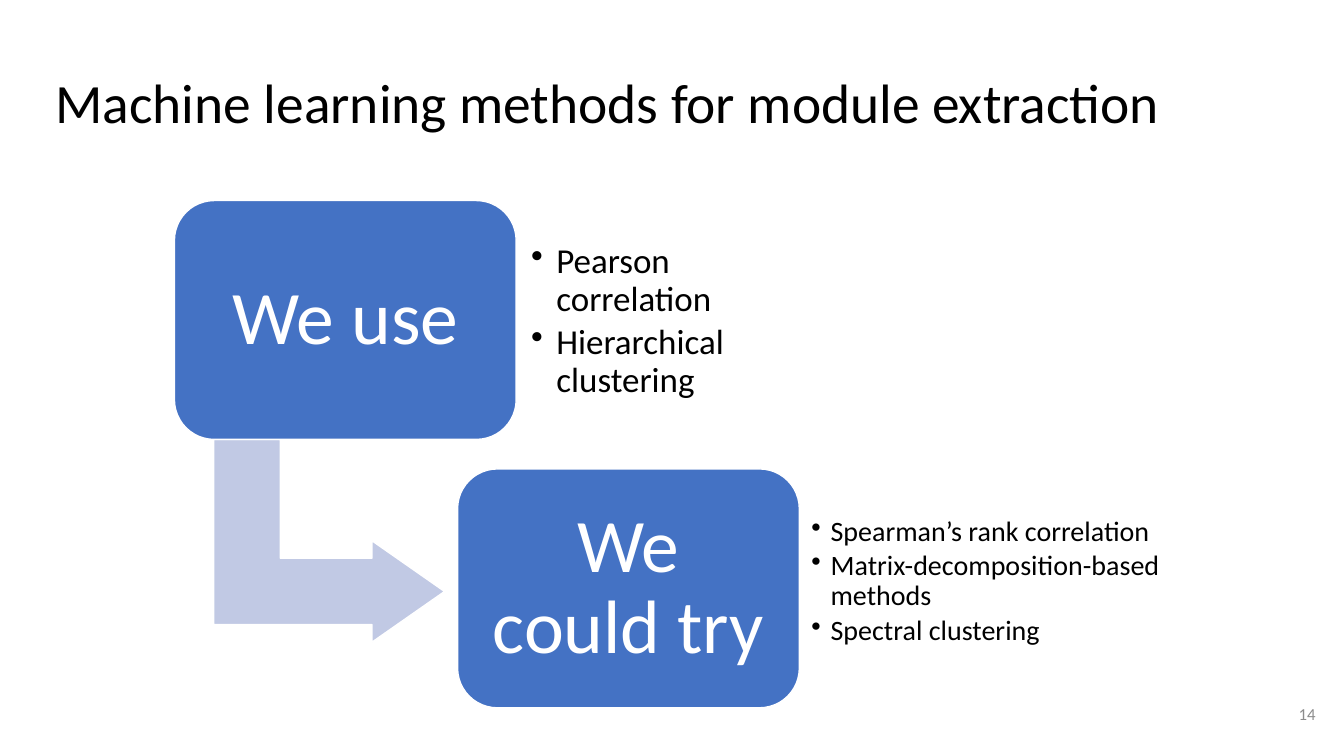
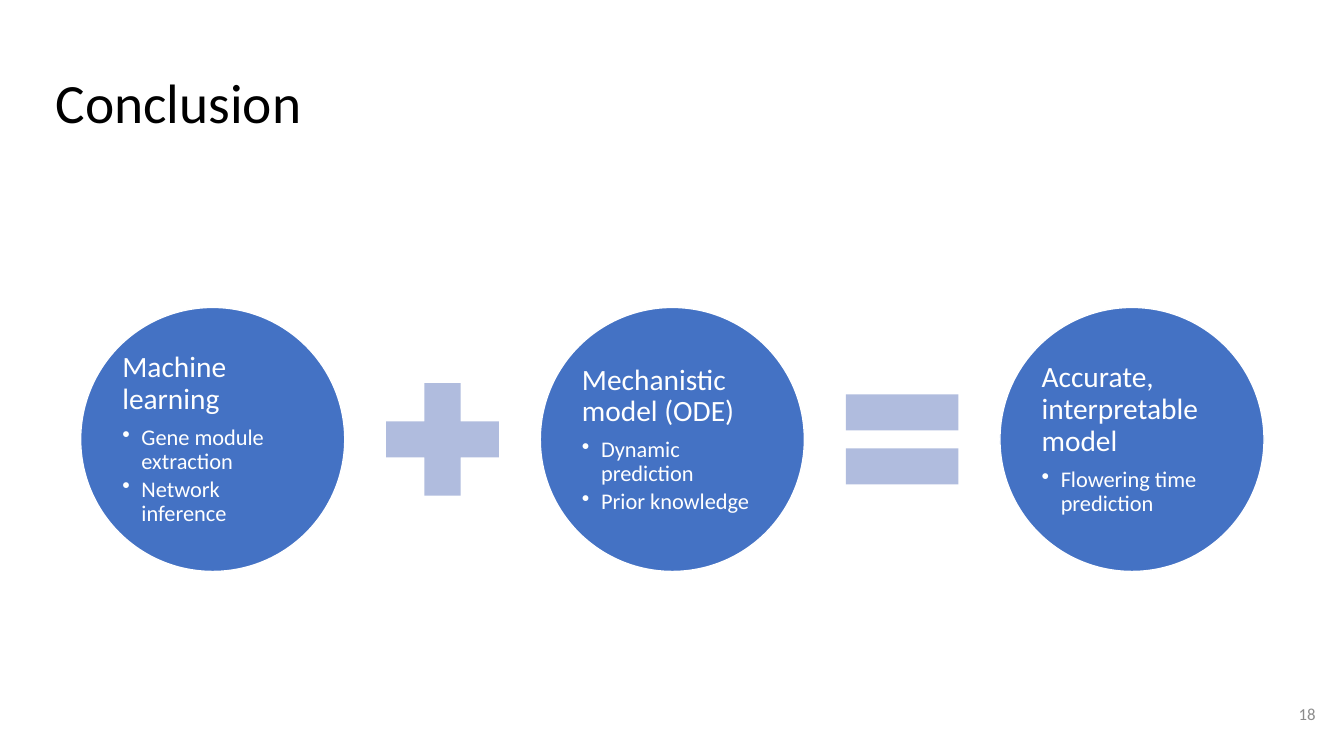
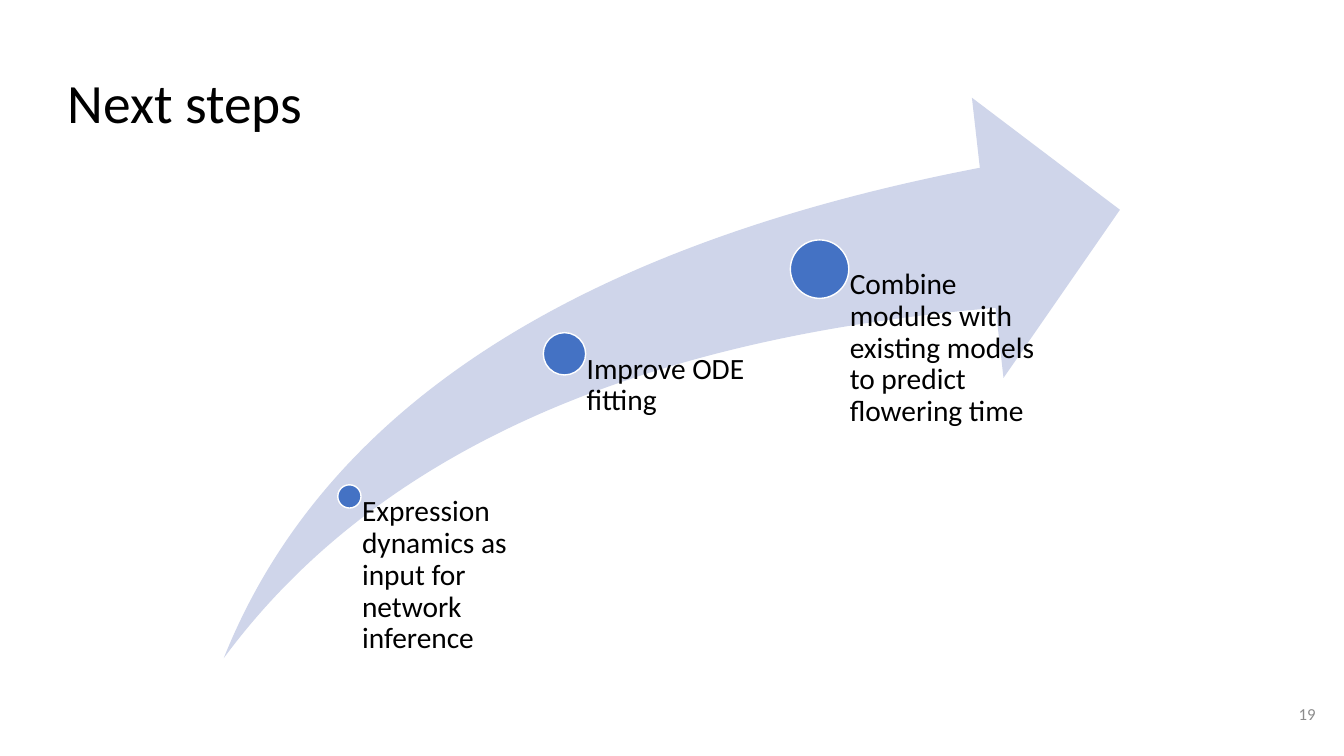
from dataclasses import dataclass
from lxml import etree
from pptx import Presentation, util as u
from pptx.dml.color import RGBColor
from pptx.enum import shapes, text
from pptx.oxml import ns


@dataclass(frozen=True)
class Theme:
    font: str = "Calibri"
    ink: str = "000000"
    white: str = "FFFFFF"
    blue: str = "4472C4"
    bend: str = "C1C9E4"
    sign: str = "B0BCDE"
    swoosh: str = "CFD5EA"
    grey: str = "8C8C8C"
    title: float = 39.6
    label: float = 54
    large: float = 25
    mid: float = 21
    list: float = 20
    small: float = 16
    note: float = 12


look = Theme()
kind = shapes.MSO_SHAPE
left, mid, right = text.PP_ALIGN.LEFT, text.PP_ALIGN.CENTER, text.PP_ALIGN.RIGHT
top, middle = text.MSO_ANCHOR.TOP, text.MSO_ANCHOR.MIDDLE

deck = Presentation()
deck.slide_width, deck.slide_height = u.Inches(13.333), u.Inches(7.5)
col, row = deck.slide_width / 100, deck.slide_height / 100


def form(page, shape, at, fill=None, edge=False):
    x, y, w, h = at
    area = [round(n) for n in (x * col, y * row, w * col, h * row)]
    if shape is None:
        return page.shapes.add_textbox(*area)
    item = page.shapes.add_shape(shape, *area)
    item.shadow.inherit = False
    item.fill.solid()
    item.fill.fore_color.rgb = RGBColor.from_string(fill)
    if edge:
        item.line.color.rgb = RGBColor.from_string(look.white)
        item.line.width = u.Pt(1)
    else:
        item.line.fill.background()
    return item


def write(item, lines, ink, pad, align=left, anchor=middle, lead=0.9, gap=0.35):
    frame = item.text_frame
    frame.word_wrap = True
    frame.auto_size = text.MSO_AUTO_SIZE.NONE
    frame.vertical_anchor = anchor
    frame.margin_left, frame.margin_top, frame.margin_right, frame.margin_bottom = map(u.Inches, pad)
    frame.text = "\n".join(line for line, size, dent in lines)
    for para, (line, size, dent) in zip(frame.paragraphs, lines):
        para.alignment = align
        para.line_spacing = lead
        para.space_before = u.Pt(0)
        para.space_after = u.Pt(size * (0.15 if dent else gap))
        if dent:
            prop = para._p.get_or_add_pPr()
            prop.set("marL", str(u.Inches(dent)))
            prop.set("indent", str(-u.Inches(dent)))
            etree.SubElement(prop, ns.qn("a:buChar")).set("char", "•")
        for run in para.runs:
            run.font.name = look.font
            run.font.size = u.Pt(size)
            run.font.color.rgb = RGBColor.from_string(ink)


pages = []
for name, num, inset in [
    ("Machine learning methods for module extraction", "14", 0.1),
    ("Conclusion", "18", 0.1),
    ("Next steps", "19", 0.22),
]:
    page = deck.slides.add_slide(deck.slide_layouts[5])
    head = page.shapes.title
    head.left, head.top = round(3.38 * col), round(8.67 * row)
    head.width, head.height = round(93.15 * col), round(11.2 * row)
    write(head, [(name, look.title, 0)], look.ink, [inset, 0.1, 0.1, 0.1], anchor=top, gap=0)
    foot = form(page, None, (92.63, 90.67, 6, 7.6))
    write(foot, [(num, look.note, 0)], look.grey, [0.1] * 4, right, lead=1, gap=0)
    pages.append(page)
ways, sums, steps = pages

bend = form(ways, kind.BENT_UP_ARROW, (16.95, 56.27, 15.08, 30.53), look.bend, True)
bend.rotation = 90
for i, size in enumerate([0.328, 0.25, 0.358]):
    bend.adjustments[i] = size

for i, (label, at, size, dent, pad, items) in enumerate([
    ("We use", (38.55, 29.73, 18.45, 25.6), look.large, 0.25, 0.13,
     ["Pearson correlation", "Hierarchical clustering"]),
    ("We could try", (59.7, 64.8, 28.58, 24.27), look.list, 0.19, 0.09,
     ["Spearman’s rank correlation", "Matrix-decomposition-based methods", "Spectral clustering"]),
]):
    card = form(ways, kind.ROUNDED_RECTANGLE,
                (12.98 + 21.07 * i, 26.53 + 35.5 * i, 25.43, 31.6), look.blue, True)
    write(card, [(label, look.label, 0)], look.white, [0.23] * 4, mid)
    write(form(ways, None, at), [(item, size, dent) for item in items], look.ink, [pad] * 4)

ratio = col / row
disc, sign, pitch, axis = 19.65, 11.4, 34.2, 58.13
for i, (label, items, mark) in enumerate([
    ("Machine learning", ["Gene module extraction", "Network inference"], kind.MATH_PLUS),
    ("Mechanistic model (ODE)", ["Dynamic prediction", "Prior knowledge"], kind.MATH_EQUAL),
    ("Accurate, interpretable model", ["Flowering time prediction"], None),
]):
    x = 6 + pitch * i
    ball = form(sums, kind.OVAL, (x, axis - disc * ratio / 2, disc, disc * ratio), look.blue, True)
    lines = [(label, look.mid, 0)] + [(item, look.small, 0.19) for item in items]
    write(ball, lines, look.white, [0.03] * 4)
    if mark:
        x += (disc + pitch - sign) / 2
        form(sums, mark, (x, axis - sign * ratio / 2, sign, sign * ratio), look.sign)

swoosh = form(steps, kind.SWOOSH_ARROW, (16.65, 12.93, 66.68, 74.13), look.swoosh)
swoosh.adjustments[0] = swoosh.adjustments[1] = 0.25
base = 87.07
for x, y, size, wide, label in [
    (26, 65.67, 1.73, 15.53, "Expression dynamics as input for network inference"),
    (42, 46.8, 3.15, 15.98, "Improve ODE fitting"),
    (60.98, 35.6, 4.35, 15.98, "Combine modules with existing models to predict flowering time"),
]:
    form(steps, kind.OVAL, (x - size / 2, y - size * ratio / 2, size, size * ratio), look.blue, True)
    note = form(steps, None, (x, y, wide, base - y))
    inset = size * col / u.Inches(1) / 2 + 0.01
    write(note, [(label, look.mid, 0)], look.ink, [inset, 0, 0, 0], anchor=top)

deck.save("out.pptx")
